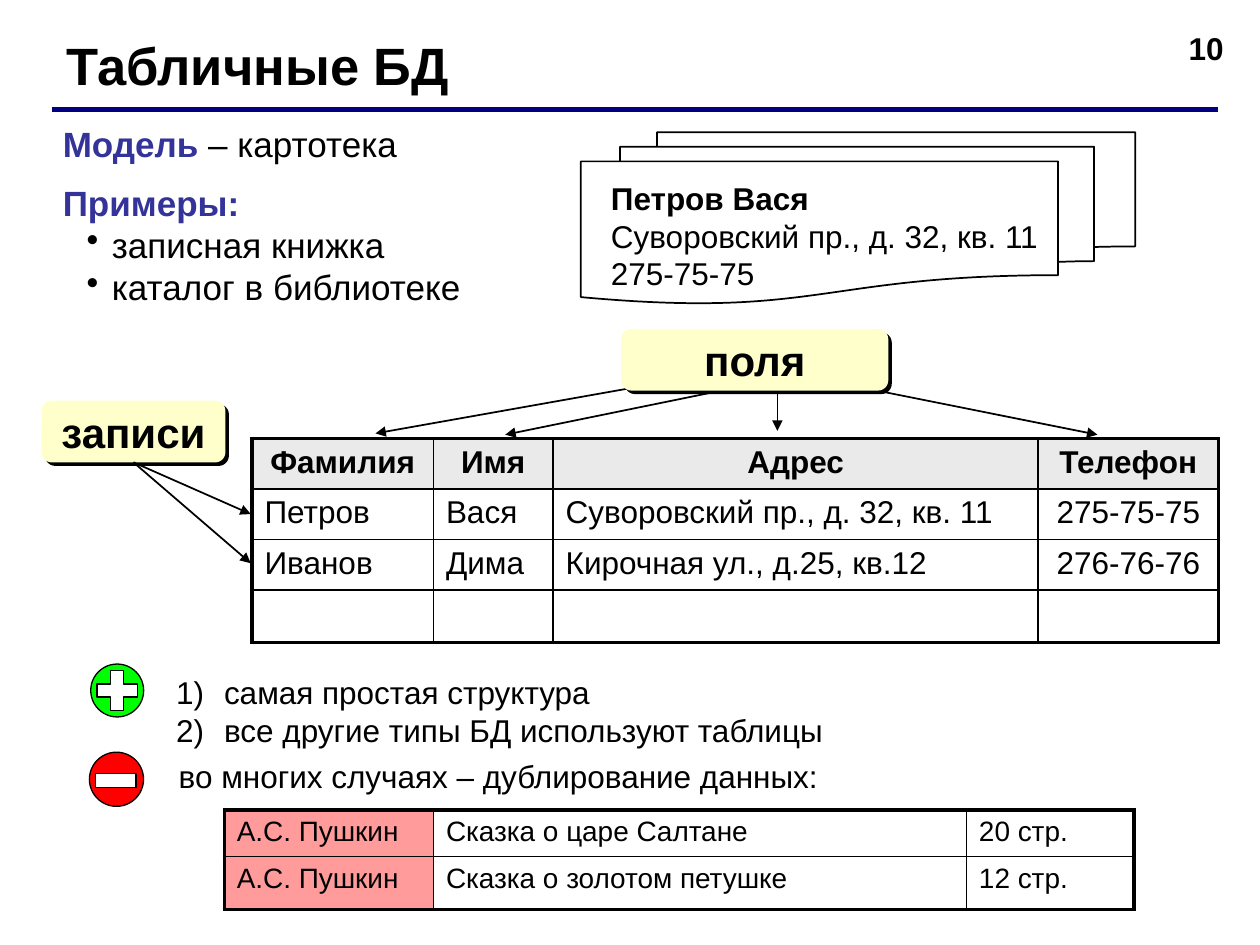
from lxml.etree import SubElement
from pptx import Presentation
from pptx.dml.color import RGBColor
from pptx.enum.shapes import MSO_CONNECTOR, MSO_SHAPE
from pptx.enum.text import MSO_ANCHOR, PP_ALIGN
from pptx.oxml.ns import qn
from pptx.util import Inches, Pt

BLACK = RGBColor(0, 0, 0)
WHITE = RGBColor(255, 255, 255)
NAVY = RGBColor(0, 0, 0x80)
INDIGO = RGBColor(0x33, 0x33, 0x99)
GREY = RGBColor(0xEA, 0xEA, 0xEA)
CREAM = RGBColor(0xFF, 0xFF, 0xCC)
PINK = RGBColor(0xFF, 0x9B, 0x9B)
GREEN = RGBColor(0, 255, 0)
RED = RGBColor(255, 0, 0)


class Deck:
    """Holds the style and the current slide, and draws each kind of element."""

    font = "Arial"

    def __init__(self):
        self.show = Presentation()
        self.show.slide_width, self.show.slide_height = Inches(10), Inches(7.5)
        self.slide = self.show.slides.add_slide(self.show.slide_layouts[6])
        self.shapes = self.slide.shapes

    def style(self, run, size, bold=False, color=BLACK):
        run.font.name, run.font.size = self.font, Pt(size)
        run.font.bold, run.font.color.rgb = bold, color

    def put(self, frame, text, size, bold=False, align=PP_ALIGN.LEFT):
        frame.text = text
        for par in frame.paragraphs:
            par.alignment = align
            for run in par.runs:
                self.style(run, size, bold)

    def text(self, box, text, size, bold=False, align=PP_ALIGN.LEFT, wrap=True):
        frame = self.shapes.add_textbox(*map(Inches, box)).text_frame
        frame.word_wrap = wrap
        self.put(frame, text, size, bold, align)
        return frame.paragraphs

    def bullet(self, par, left, hang, tag, **attrs):
        props = par._p.get_or_add_pPr()
        props.set("marL", str(Inches(left)))
        props.set("indent", str(-Inches(hang)))
        SubElement(props, qn(tag), **attrs)

    def shape(self, kind, box, fill=None, line=None):
        shape = self.shapes.add_shape(kind, *map(Inches, box))
        shape.shadow.inherit = False
        if fill is None:
            shape.fill.background()
        else:
            shape.fill.solid()
            shape.fill.fore_color.rgb = fill
        if line is None:
            shape.line.fill.background()
        else:
            shape.line.color.rgb, shape.line.width = BLACK, Pt(line)
        return shape

    def label(self, box, text):
        shape = self.shape(MSO_SHAPE.ROUNDED_RECTANGLE, box, CREAM)
        effects = shape._element.spPr.find(qn("a:effectLst"))
        shadow = SubElement(effects, qn("a:outerShdw"), dist=str(Pt(2.8)),
                            dir="2700000", algn="ctr", rotWithShape="0")
        SubElement(shadow, qn("a:srgbClr"), val=str(BLACK))
        frame = shape.text_frame
        frame.word_wrap, frame.vertical_anchor = False, MSO_ANCHOR.MIDDLE
        self.put(frame, text, 24, True, PP_ALIGN.CENTER)
        return shape

    def line(self, start, end, color=BLACK, width=1, arrow=True, source=None):
        line = self.shapes.add_connector(
            MSO_CONNECTOR.STRAIGHT, *map(Inches, start + end))
        line.line.color.rgb, line.line.width = color, Pt(width)
        if arrow:
            edge = line._element.spPr.find(qn("a:ln"))
            SubElement(edge, qn("a:tailEnd"), type="triangle")
        SubElement(line._element.spPr, qn("a:effectLst"))
        if source is not None:
            line.begin_connect(source, 2)

    def border(self, cell, outer):
        props = cell._tc.get_or_add_tcPr()
        for side in "LRTB":
            width = Pt(2.25 if outer[side] else 1)
            edge = SubElement(props, qn(f"a:ln{side}"), w=str(width))
            fill = SubElement(edge, qn("a:solidFill"))
            SubElement(fill, qn("a:srgbClr"), val=str(BLACK))

    def table(self, place, cols, highs, rows, size, look):
        box = (*place, sum(cols), sum(highs))
        table = self.shapes.add_table(
            len(highs), len(cols), *map(Inches, box)).table
        table.first_row = table.horz_banding = False
        for col, width in zip(table.columns, cols):
            col.width = Inches(width)
        for row, high in zip(table.rows, highs):
            row.height = Inches(high)
        for r, row in enumerate(rows):
            for c, text in enumerate(row):
                cell = table.cell(r, c)
                fill, bold, align = look(r, c)
                self.put(cell.text_frame, text, size, bold, align)
                self.border(cell, {"L": c == 0, "R": c == len(cols) - 1,
                                   "T": r == 0, "B": r == len(highs) - 1})
                cell.fill.solid()
                cell.fill.fore_color.rgb = fill


def card_look(r, c):
    if r == 0:
        return GREY, True, PP_ALIGN.CENTER
    return WHITE, False, PP_ALIGN.CENTER if c == 3 else PP_ALIGN.LEFT


def book_look(r, c):
    return PINK if c == 0 else WHITE, False, PP_ALIGN.LEFT


def main():
    deck = Deck()
    deck.text((7.48, 0.18, 2.33, 0.52), "10", 18, True, PP_ALIGN.RIGHT)
    deck.line((0.41, 0.87), (9.67, 0.87), NAVY, 3, arrow=False)
    deck.text((0.43, 0.21, 8.9, 0.6), "Табличные БД", 30, True)

    cards = [
        ("Фамилия", "Имя", "Адрес", "Телефон"),
        ("Петров", "Вася", "Суворовский пр., д. 32, кв. 11", "275-75-75"),
        ("Иванов", "Дима", "Кирочная ул., д.25, кв.12", "276-76-76"),
        ("", "", "", ""),
    ]
    deck.table((2, 3.48), (1.44, 0.95, 3.85, 1.43), (0.4, 0.4, 0.4, 0.42),
               cards, 18, card_look)

    model, heading, *items = deck.text(
        (0.4, 0.92, 3.96, 1.6),
        "Модель\nПримеры:\nзаписная книжка\nкаталог в библиотеке", 20)
    for par in (model, heading):
        deck.style(par.runs[0], 20, True, INDIGO)
    rest = model.add_run()
    rest.text = " – картотека"
    deck.style(rest, 20)
    heading.space_before = Pt(10)
    for par in items:
        par.level = 1
        deck.bullet(par, 0.39, 0.2, "a:buChar", char="•")

    deck.shape(MSO_SHAPE.FLOWCHART_MULTIDOCUMENT, (4.61, 1.05, 4.4, 1.36), line=1)
    person = deck.text(
        (4.75, 1.37, 3.62, 1),
        "Петров Вася\vСуворовский пр., д. 32, кв. 11\n275-75-75", 18, wrap=False)
    person[0].runs[0].font.bold = True

    records = deck.label((0.33, 3.18, 1.46, 0.49), "записи")
    for y in (4.08, 4.47):
        deck.line((1.06, 3.67), (1.99, y), source=records)

    deck.shape(MSO_SHAPE.OVAL, (0.72, 5.27, 0.42, 0.42), GREEN, 0.75)
    plus = deck.shape(MSO_SHAPE.CROSS, (0.77, 5.32, 0.32, 0.32), WHITE, 0.75)
    plus.adjustments[0] = 0.34
    deck.shape(MSO_SHAPE.OVAL, (0.71, 5.97, 0.43, 0.43), RED, 0.75)
    deck.shape(MSO_SHAPE.RECTANGLE, (0.76, 6.14, 0.32, 0.11), WHITE, 0.75)

    pros = deck.text(
        (1.3, 5.29, 7.94, 0.73),
        "самая простая структура\nвсе другие типы БД используют таблицы", 18)
    for par in pros:
        deck.bullet(par, 0.38, 0.38, "a:buAutoNum", type="arabicParenR")
    deck.text((1.32, 5.96, 7.86, 0.42),
              "во многих случаях – дублирование данных:", 18)

    for start, end in (((5.91, 2.92), (2.98, 3.44)), ((6.17, 2.95), (6.17, 3.42)),
                       ((5.97, 3.05), (4.01, 3.45)), ((6.41, 2.99), (8.71, 3.45))):
        deck.line(start, end)
    deck.label((4.93, 2.61, 2.12, 0.49), "поля")

    books = [
        ("А.С. Пушкин", "Сказка о царе Салтане", "20 стр."),
        ("А.С. Пушкин", "Сказка о золотом петушке", "12 стр."),
    ]
    deck.table((1.78, 6.43), (1.66, 4.23, 1.33), (0.37, 0.42),
               books, 16, book_look)
    deck.show.save("out.pptx")


if __name__ == "__main__":
    main()
